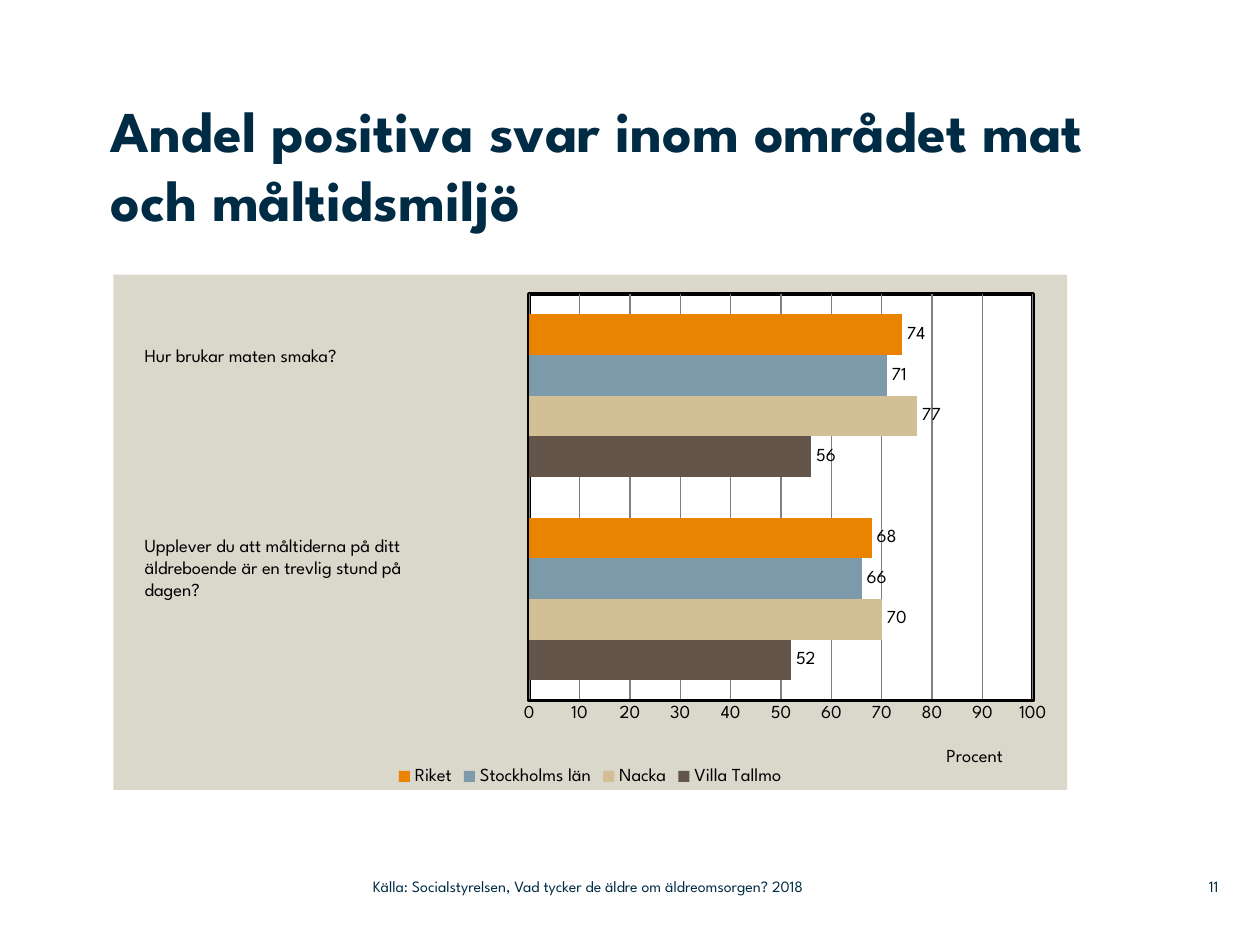
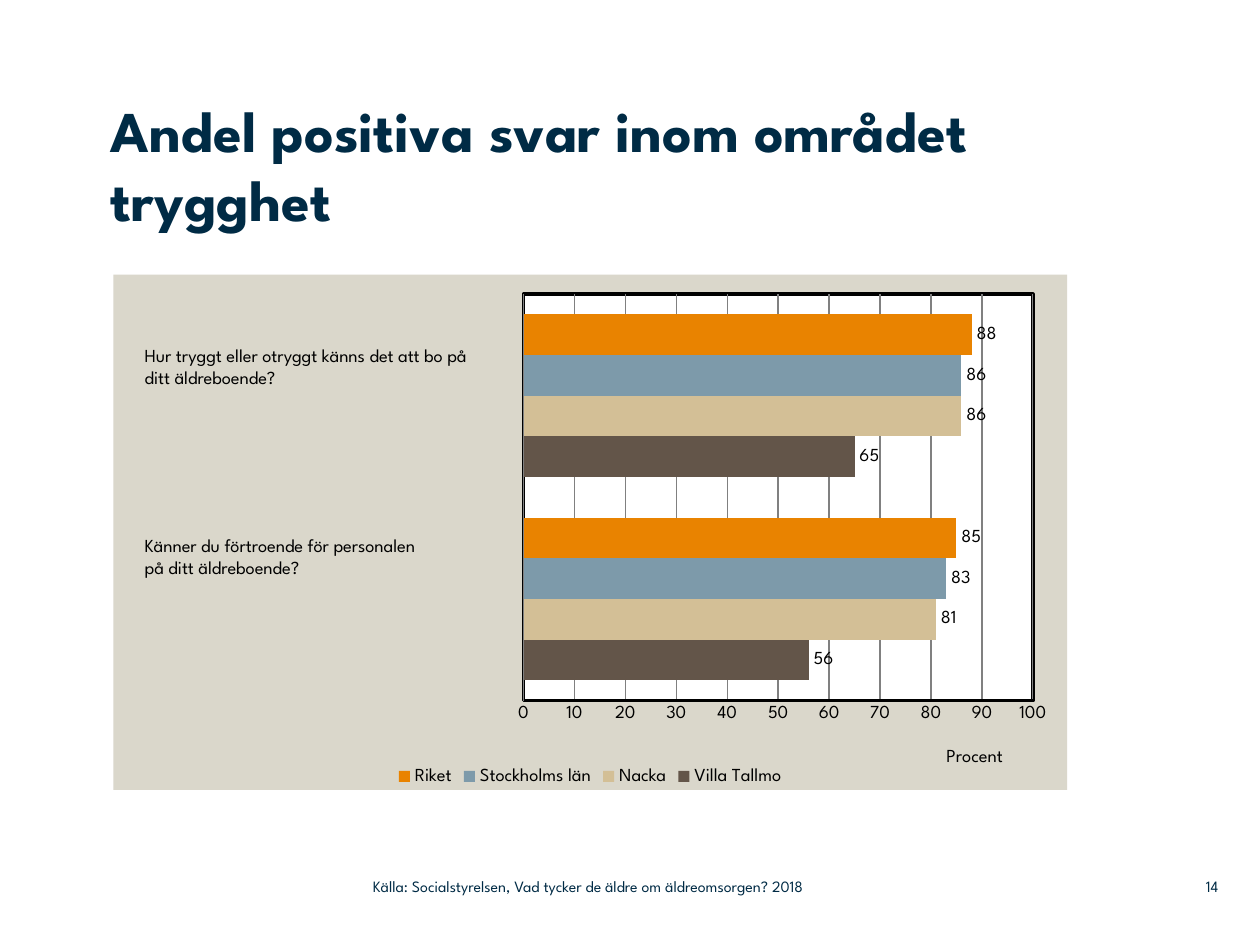
from lxml.etree import SubElement
from pptx import Presentation
from pptx.chart.data import CategoryChartData
from pptx.dml.color import RGBColor
from pptx.enum.chart import XL_CHART_TYPE, XL_LABEL_POSITION, XL_LEGEND_POSITION, XL_TICK_MARK
from pptx.enum.text import MSO_ANCHOR, MSO_AUTO_SIZE, PP_ALIGN
from pptx.oxml import parse_xml
from pptx.oxml.ns import nsdecls, qn
from pptx.util import Inches, Pt

WIDTH, HEIGHT = Inches(10), Inches(7.5)
COL, ROW = WIDTH / 100, HEIGHT / 75
FACE = "League Spartan"
NAVY, BLACK, WHITE, SAND, GREY = "002B45", "000000", "FFFFFF", "DAD7CB", "808080"
SERIES = {"Villa Tallmo": "635549", "Nacka": "D3BF96",
          "Stockholms län": "7D9AAA", "Riket": "E98300"}
CHART = (9, 21.8, 75.7, 40.9)
SOURCE = "Källa: Socialstyrelsen, Vad tycker de äldre om äldreomsorgen? 2018"

SLIDES = [
    dict(title="Andel positiva svar inom området mat och måltidsmiljö", span=84.2,
         number="11", left=0.436,
         values=[(52, 56), (70, 77), (66, 71), (68, 74)],
         asks=[["Hur brukar maten smaka?"],
               ["Upplever du att måltiderna på ditt äldreboende är en trevlig stund på",
                "dagen?"]]),
    dict(title="Andel positiva svar inom området trygghet", span=76,
         number="14", left=0.43,
         values=[(56, 65), (81, 86), (83, 86), (85, 88)],
         asks=[["Hur tryggt eller otryggt känns det att bo på ditt äldreboende?"],
               ["Känner du förtroende för personalen", "på ditt äldreboende?"]]),
]


def paint(code):
    """Turn a hex string into a colour."""
    return RGBColor.from_string(code)


def place(box):
    """Turn columns and rows into slide lengths."""
    x, y, w, h = box
    return [round(n) for n in (x * COL, y * ROW, w * COL, h * ROW)]


def style(font, size, color, bold=False):
    """Set face, size, colour and weight of a font."""
    font.name, font.size, font.bold = FACE, Pt(size), bold
    font.color.rgb = paint(color)


def bare(frame, anchor):
    """Clear the margins of a text frame and anchor it."""
    frame.margin_left = frame.margin_right = frame.margin_top = frame.margin_bottom = 0
    frame.vertical_anchor = anchor


def write(slide, box, lines, size, color):
    """Add a wrapped text box with one paragraph per line."""
    frame = slide.shapes.add_textbox(*place(box)).text_frame
    frame.word_wrap = True
    frame.text = "\n".join(lines)
    for para in frame.paragraphs:
        style(para.font, size, color)
    return frame


def head(slide, text, span):
    """Move and format the title placeholder."""
    shape = slide.shapes.title
    shape.left, shape.top, shape.width, shape.height = place((8.8, 7.5, span, 14.2))
    frame = shape.text_frame
    frame.text = text
    frame.auto_size = MSO_AUTO_SIZE.NONE
    bare(frame, MSO_ANCHOR.TOP)
    para = frame.paragraphs[0]
    para.alignment = PP_ALIGN.LEFT
    style(para.font, 33, NAVY, True)


def layout(**parts):
    """Build a manual chart layout."""
    node = parse_xml(f"<c:layout {nsdecls('c')}><c:manualLayout/></c:layout>")
    for tag, val in parts.items():
        SubElement(node[0], qn(f"c:{tag}")).set("val", str(val))
    return node


def panel(color, edge=None):
    """Build chart area properties with a fill and maybe an edge."""
    fill = '<a:solidFill><a:srgbClr val="{}"/></a:solidFill>'
    line = (f'<a:ln w="{Pt(2)}">{fill.format(edge)}</a:ln>' if edge
            else "<a:ln><a:noFill/></a:ln>")
    return parse_xml(f"<c:spPr {nsdecls('c', 'a')}>{fill.format(color)}{line}</c:spPr>")


def scale(axis):
    """Format the percent axis with its grid and title."""
    axis.minimum_scale, axis.maximum_scale, axis.major_unit = 0, 100, 10
    axis.major_tick_mark = axis.minor_tick_mark = XL_TICK_MARK.NONE
    axis.format.line.color.rgb = paint(BLACK)
    axis.format.line.width = Pt(2)
    grid = axis.major_gridlines.format.line
    grid.color.rgb, grid.width = paint(GREY), Pt(0.75)
    style(axis.tick_labels.font, 10.5, BLACK)
    title = axis.axis_title
    title.text_frame.text = "Procent"
    style(title.text_frame.paragraphs[0].font, 10.5, BLACK)
    node = title._element
    for old in node.findall(qn("c:layout")):
        node.remove(old)
    node.find(qn("c:tx")).addnext(layout(xMode="edge", yMode="edge", x=0.87, y=0.91))


def bars(slide, box, values, left):
    """Add the bar chart, its plot starting at the given share."""
    data = CategoryChartData()
    data.categories = ["1", "2"]
    for name, vals in zip(SERIES, values):
        data.add_series(name, vals)
    chart = slide.shapes.add_chart(XL_CHART_TYPE.BAR_CLUSTERED, *place(box), data).chart
    chart.has_title = False
    style(chart.font, 10.5, BLACK)
    chart.has_legend = True
    chart.legend.position = XL_LEGEND_POSITION.BOTTOM
    chart.legend.include_in_layout = False
    style(chart.legend.font, 10.5, BLACK)
    chart.category_axis.visible = False
    scale(chart.value_axis)
    plot = chart.plots[0]
    plot.gap_width, plot.overlap, plot.vary_by_categories = 100, 0, False
    plot.has_data_labels = True
    labels = plot.data_labels
    labels.show_value, labels.position = True, XL_LABEL_POSITION.OUTSIDE_END
    style(labels.font, 10.5, BLACK)
    for item in plot.series:
        item.format.fill.solid()
        item.format.fill.fore_color.rgb = paint(SERIES[item.name])
    root = chart._chartSpace
    root.find(qn("c:txPr")).addprevious(panel(SAND))
    area = root.find(qn("c:chart")).find(qn("c:plotArea"))
    for old in area.findall(qn("c:layout")):
        area.remove(old)
    area.insert(0, layout(layoutTarget="inner", xMode="edge", yMode="edge",
                          x=left, y=0.038, w=round(0.964 - left, 3), h=0.789))
    area.append(panel(WHITE, BLACK))


def asked(slide, box, asks):
    """Write the questions beside their groups of bars."""
    x, y, _, _ = box
    for i, lines in enumerate(asks):
        frame = write(slide, (x + 1.5, y + 5 + 15.1 * i, 29.4, 4.5), lines, 10.5, BLACK)
        frame.auto_size = MSO_AUTO_SIZE.SHAPE_TO_FIT_TEXT


def foot(slide, number):
    """Write the page number and the source line."""
    page = write(slide, (92, 68.9, 4.7, 2.9), [number], 9, NAVY)
    page.paragraphs[0].alignment = PP_ALIGN.RIGHT
    note = write(slide, (29.6, 68.9, 44.3, 2.9), [SOURCE], 9, NAVY)
    for frame in (page, note):
        bare(frame, MSO_ANCHOR.MIDDLE)


def main():
    """Build and save the slides."""
    deck = Presentation()
    deck.slide_width, deck.slide_height = WIDTH, HEIGHT
    for part in SLIDES:
        slide = deck.slides.add_slide(deck.slide_layouts[5])
        head(slide, part["title"], part["span"])
        bars(slide, CHART, part["values"], part["left"])
        asked(slide, CHART, part["asks"])
        foot(slide, part["number"])
    deck.save("out.pptx")


if __name__ == "__main__":
    main()
